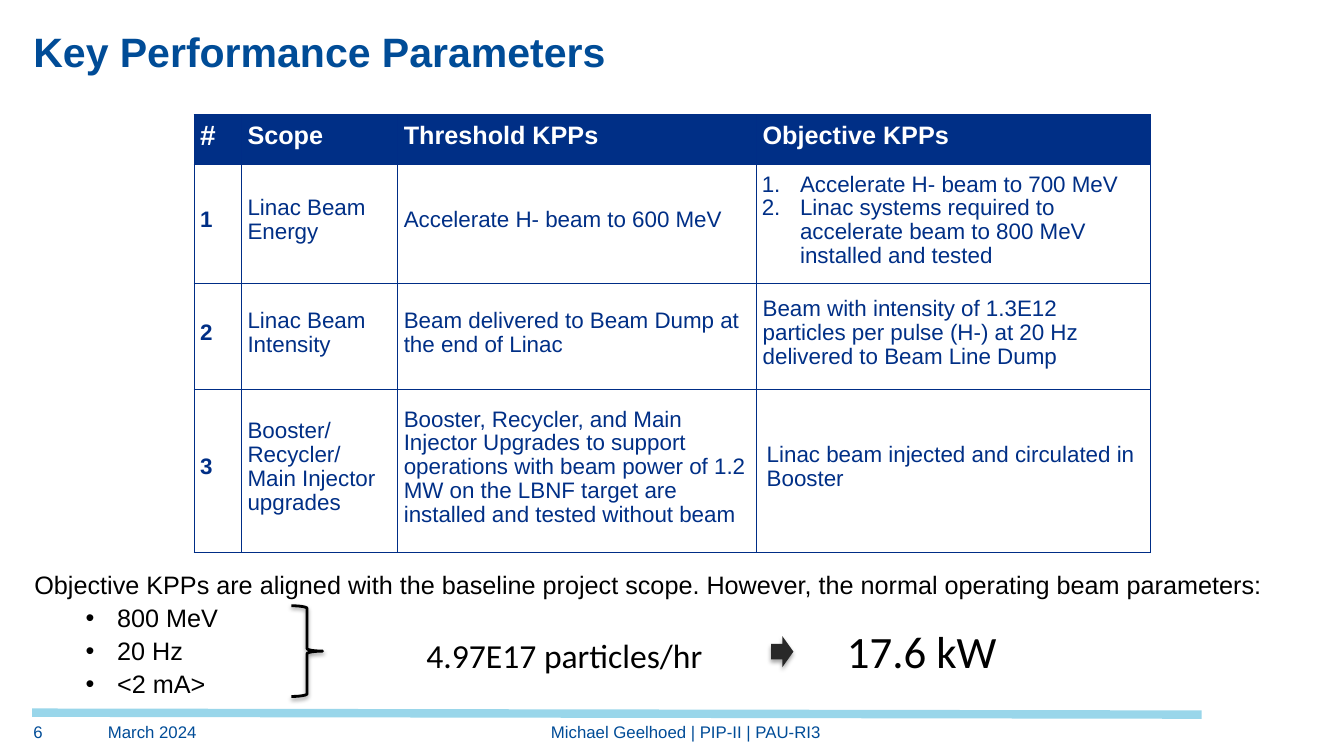
"""Build the Key Performance Parameters slide."""

from dataclasses import dataclass
from typing import NamedTuple

from lxml.etree import SubElement
from pptx import Presentation
from pptx.dml.color import RGBColor
from pptx.enum.shapes import MSO_CONNECTOR, MSO_SHAPE
from pptx.enum.text import MSO_ANCHOR, MSO_AUTO_SIZE, PP_ALIGN
from pptx.oxml.ns import qn
from pptx.util import Inches, Pt

TITLE_BLUE = RGBColor(0x00, 0x4C, 0x97)
TABLE_BLUE = RGBColor(0x00, 0x2F, 0x86)
BORDER_BLUE = RGBColor(0x00, 0x2D, 0x86)
RULE_BLUE = RGBColor(0x99, 0xD6, 0xEA)
ARROW_GRAY = RGBColor(0x28, 0x28, 0x28)
WHITE = RGBColor(0xFF, 0xFF, 0xFF)
BLACK = RGBColor(0x00, 0x00, 0x00)
WIDTH, HEIGHT = Inches(13.33), Inches(7.5)


class Area(NamedTuple):
    """A rectangle in percent of the slide's width and height."""

    left: float
    top: float
    width: float
    height: float


@dataclass
class Entry:
    """The content of one table cell, with indents in percent of the width."""

    lines: tuple
    size: float = 16
    bold: bool = False
    color: RGBColor = TABLE_BLUE
    indent: float = 0.45
    right: float = 0.4
    numbered: bool = False


class Footer(NamedTuple):
    """One footer text with its place."""

    text: str
    area: Area
    align: PP_ALIGN = PP_ALIGN.LEFT


COLUMNS = (3.53, 11.63, 26.7, 29.33)
ROWS = (6.53, 15.73, 14, 21.6)
ENTRIES = (
    (Entry(("#",), 20, True, WHITE),
     *(Entry((name,), 18, True, WHITE)
       for name in ("Scope", "Threshold KPPs", "Objective KPPs"))),
    (Entry(("1",), bold=True),
     Entry(("Linac Beam Energy",)),
     Entry(("Accelerate H- beam to 600 MeV",)),
     Entry(("Accelerate H- beam to 700 MeV",
            "Linac systems required to accelerate beam to 800 MeV installed and tested"),
           indent=3.23, numbered=True)),
    (Entry(("2",), bold=True),
     Entry(("Linac Beam Intensity",)),
     Entry(("Beam delivered to Beam Dump at the end of Linac",)),
     Entry(("Beam with intensity of 1.3E12 particles per pulse (H-) at 20 Hz "
            "delivered to Beam Line Dump",), right=0.9)),
    (Entry(("3",), bold=True),
     Entry(("Booster/ Recycler/ Main Injector upgrades",)),
     Entry(("Booster, Recycler, and Main Injector Upgrades to support operations with "
            "beam power of 1.2 MW on the LBNF target are installed and tested without beam",)),
     Entry(("Linac beam injected and circulated in Booster",), indent=0.75)),
)
SCOPE_NOTE = ("Objective KPPs are aligned with the baseline project scope. "
              "However, the normal operating beam parameters:")
BEAM_PARAMETERS = ("800 MeV", "20 Hz", "<2 mA>")
FOOTERS = (
    Footer("6", Area(2.48, 95.47, 4.5, 3.47)),
    Footer("March 2024", Area(8.03, 95.47, 7.35, 3.47)),
    Footer("Michael Geelhoed | PIP-II | PAU-RI3", Area(16.8, 95.47, 68.48, 3.6),
           PP_ALIGN.CENTER),
)


def across(percent: float) -> int:
    """Return a share of the slide's width."""
    return round(WIDTH * percent / 100)


def down(percent: float) -> int:
    """Return a share of the slide's height."""
    return round(HEIGHT * percent / 100)


def place(area: Area) -> tuple:
    """Return left, top, width and height as lengths."""
    return across(area.left), down(area.top), across(area.width), down(area.height)


def move(shape, area: Area) -> None:
    """Put a shape at its area."""
    shape.left, shape.top, shape.width, shape.height = place(area)


def clear_margins(frame, anchor=MSO_ANCHOR.TOP) -> None:
    """Make a text frame wrap, without margins or fitting."""
    frame.margin_left = frame.margin_right = frame.margin_top = frame.margin_bottom = 0
    frame.word_wrap, frame.auto_size, frame.vertical_anchor = True, MSO_AUTO_SIZE.NONE, anchor


def set_indent(para, left: float, hanging: float = 0, bullet: str = "buNone", **settings) -> None:
    """Set a paragraph's indents and bullet."""
    properties = para._p.get_or_add_pPr()
    properties.set("marL", str(across(left)))
    properties.set("indent", str(-across(hanging)))
    SubElement(properties, qn(f"a:{bullet}"), **settings)


def set_font(para, size: float, color: RGBColor, bold: bool = False, name: str = "Arial") -> None:
    """Set a paragraph's font."""
    para.font.name, para.font.size, para.font.bold = name, Pt(size), bold
    para.font.color.rgb = color


def add_border(cell) -> None:
    """Draw all four borders of a cell."""
    properties = cell._tc.get_or_add_tcPr()
    for side in ("lnL", "lnR", "lnT", "lnB"):
        line = SubElement(properties, qn(f"a:{side}"), w=str(Pt(0.75)))
        fill = SubElement(line, qn("a:solidFill"))
        SubElement(fill, qn("a:srgbClr"), val=str(BORDER_BLUE))


def fill_cell(cell, entry: Entry, header: bool) -> None:
    """Write and format one table cell."""
    add_border(cell)
    if header:
        cell.fill.solid()
        cell.fill.fore_color.rgb = TABLE_BLUE
    else:
        cell.fill.background()
    cell.vertical_anchor = MSO_ANCHOR.MIDDLE
    cell.margin_left = cell.margin_top = 0
    cell.margin_right, cell.margin_bottom = across(entry.right), down(0.8)
    cell.text_frame.text = "\n".join(entry.lines)
    for para in cell.text_frame.paragraphs:
        if entry.numbered:
            set_indent(para, entry.indent, 2.85, "buAutoNum", type="arabicPeriod")
        else:
            set_indent(para, entry.indent)
        para.line_spacing = 0.96
        set_font(para, entry.size, entry.color, entry.bold)


def add_parameter_table(page) -> None:
    """Add the table of key performance parameters."""
    area = Area(14.44, 15.2, sum(COLUMNS), sum(ROWS))
    table = page.shapes.add_table(len(ROWS), len(COLUMNS), *place(area)).table
    table.horz_banding = False
    for column, width in zip(table.columns, COLUMNS):
        column.width = across(width)
    for index, (row, height) in enumerate(zip(table.rows, ROWS)):
        row.height = down(height)
        for cell, entry in zip(row.cells, ENTRIES[index]):
            fill_cell(cell, entry, index == 0)


def add_beam_list(box) -> None:
    """Write the scope note and the beam parameters."""
    move(box, Area(2.48, 75.33, 94.13, 16.93))
    clear_margins(box.text_frame)
    box.text_frame.text = "\n".join((SCOPE_NOTE, *BEAM_PARAMETERS))
    for index, para in enumerate(box.text_frame.paragraphs):
        if index:
            para.level = 1
            set_indent(para, 6.23, 2.33, "buChar", char="•")
        else:
            set_indent(para, 0.08)
        para.space_before = Pt(2 if index else 0)
        set_font(para, 18, BLACK)


def add_symbol(page, kind: MSO_SHAPE, area: Area, opacity: int, distance: float):
    """Add a preset shape with a soft shadow below it."""
    symbol = page.shapes.add_shape(kind, *place(area))
    symbol.shadow.inherit = False
    effects = symbol._element.spPr.find(qn("a:effectLst"))
    shadow = SubElement(effects, qn("a:outerShdw"), blurRad=str(Pt(3.1)),
                        dist=str(Pt(distance)), dir="5400000", rotWithShape="0")
    color = SubElement(shadow, qn("a:srgbClr"), val=str(BLACK))
    SubElement(color, qn("a:alpha"), val=str(opacity * 1000))
    return symbol


def add_beam_power(page) -> None:
    """Add the brace, the particle rate, the arrow and the power."""
    brace = add_symbol(page, MSO_SHAPE.RIGHT_BRACE, Area(21.68, 80.13, 2.33, 12), 38, 1.6)
    brace.fill.background()
    brace.line.color.rgb, brace.line.width = BLACK, Pt(2)
    box = page.shapes.add_textbox(*place(Area(28.35, 81.87, 50.03, 8.53)))
    box.text_frame.word_wrap = True
    box.text_frame.margin_left = across(3.38)
    para = box.text_frame.paragraphs[0]
    tabs = SubElement(para._p.get_or_add_pPr(), qn("a:tabLst"))
    SubElement(tabs, qn("a:tab"), pos=str(across(31.28)), algn="l")
    set_font(para, 24, BLACK, name="Calibri")
    for text, size in (("4.97E17 particles/hr\t", 24), ("17.6 kW", 32)):
        span = para.add_run()
        span.text, span.font.size = text, Pt(size)
    arrow = add_symbol(page, MSO_SHAPE.RIGHT_ARROW, Area(57.38, 84.13, 1.65, 4.13), 35, 1.8)
    arrow.fill.solid()
    arrow.fill.fore_color.rgb = ARROW_GRAY
    arrow.line.fill.background()


def add_footer(page) -> None:
    """Add the rule and the footer texts."""
    rule = page.shapes.add_connector(MSO_CONNECTOR.STRAIGHT, across(2.4), down(94.27),
                                     across(89.4), down(94.53))
    rule.line.color.rgb, rule.line.width = RULE_BLUE, Pt(6)
    SubElement(rule._element.spPr, qn("a:effectLst"))
    for footer in FOOTERS:
        box = page.shapes.add_textbox(*place(footer.area))
        clear_margins(box.text_frame)
        box.text_frame.text = footer.text
        para = box.text_frame.paragraphs[0]
        para.alignment = footer.align
        set_font(para, 12, TITLE_BLUE)


def main() -> None:
    """Build and save the deck."""
    deck = Presentation()
    deck.slide_width, deck.slide_height = WIDTH, HEIGHT
    page = deck.slides.add_slide(deck.slide_layouts[1])
    title, body = page.placeholders
    add_footer(page)
    move(title, Area(2.48, 3.73, 95.05, 6.27))
    clear_margins(title.text_frame, MSO_ANCHOR.BOTTOM)
    title.text_frame.text = "Key Performance Parameters"
    heading = title.text_frame.paragraphs[0]
    heading.alignment = PP_ALIGN.LEFT
    set_font(heading, 29.3, TITLE_BLUE, True)
    add_parameter_table(page)
    add_beam_list(body)
    add_beam_power(page)
    deck.save("out.pptx")


if __name__ == "__main__":
    main()
